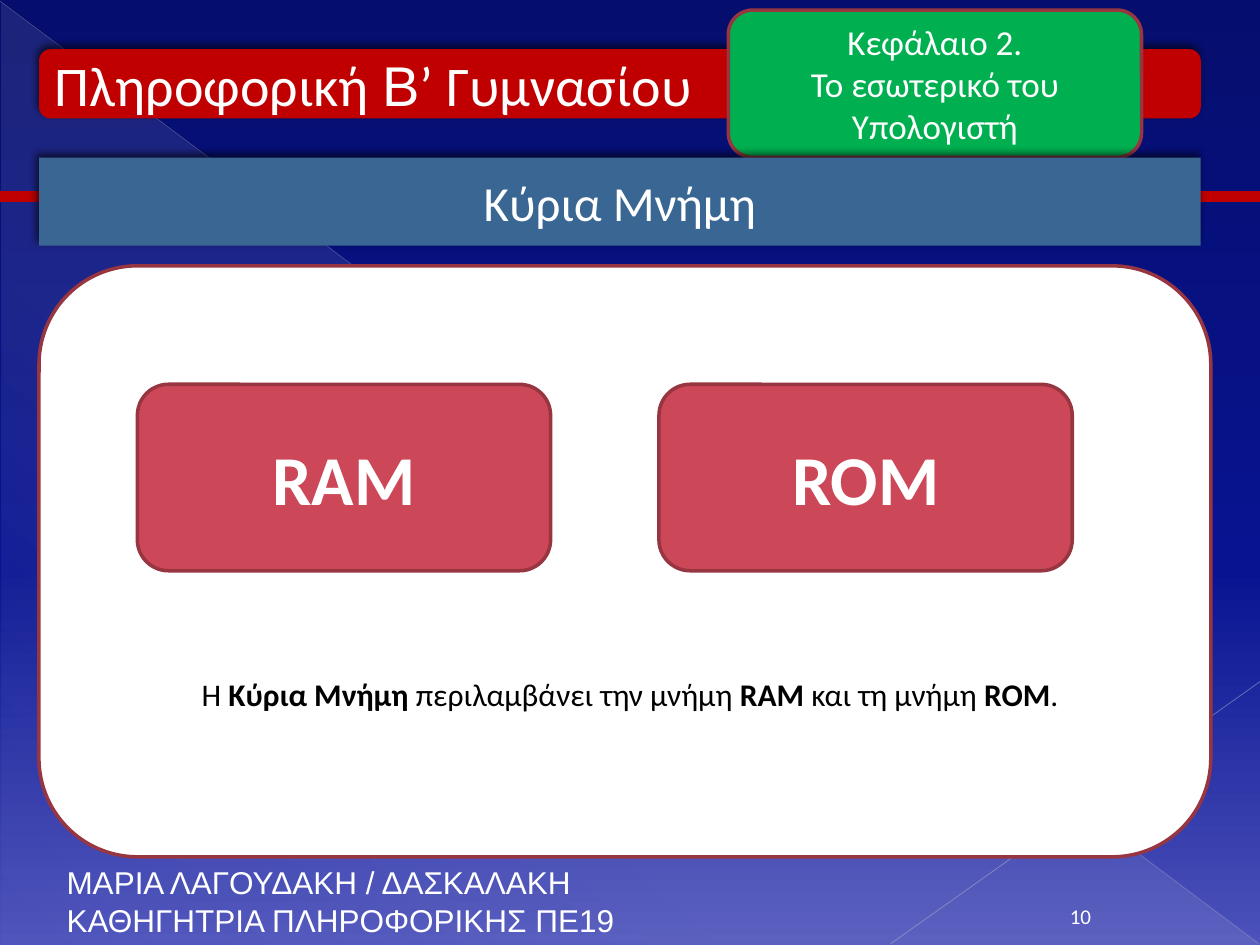
"""Build the main memory (RAM and ROM) slide of a Greek informatics course."""
from dataclasses import dataclass
from typing import NamedTuple, Optional

from lxml import etree
from pptx import Presentation
from pptx import util as u
from pptx.dml.color import RGBColor
from pptx.enum import shapes, text
from pptx.oxml import ns

WHITE = RGBColor(0xFF, 0xFF, 0xFF)
BLACK = RGBColor(0x00, 0x00, 0x00)
RED = RGBColor(0xC0, 0x00, 0x00)
GREEN = RGBColor(0x00, 0xB0, 0x50)
BLUE = RGBColor(0x39, 0x66, 0x93)
ROSE = RGBColor(0xCC, 0x47, 0x57)
MAROON = RGBColor(0x97, 0x35, 0x40)
SILVER = RGBColor(0xB1, 0xB2, 0xC7)
PALE = RGBColor(0xBA, 0xBA, 0xCD)
NIGHT = RGBColor(0x06, 0x0E, 0x6D)
NAVY = RGBColor(0x07, 0x13, 0x91)
VIOLET = RGBColor(0x4C, 0x52, 0xBA)

CENTER = text.PP_ALIGN.CENTER
MIDDLE = text.MSO_ANCHOR.MIDDLE


class Box(NamedTuple):
    left: float
    top: float
    width: float
    height: float

    def emu(self) -> list:
        return [u.Inches(v) for v in self]


class Stop(NamedTuple):
    position: int
    color: RGBColor
    opacity: int = 100


class Span(NamedTuple):
    text: str
    bold: bool = False
    font: str = "Calibri"


@dataclass
class Panel:
    box: Box
    fill: RGBColor
    label: tuple = ()
    size: int = 18
    align: Optional[text.PP_ALIGN] = CENTER
    outlined: bool = True


@dataclass
class Rule:
    start: tuple
    end: tuple
    color: RGBColor
    width: float
    opacity: int = 100


def child(parent, tag: str, **attrs):
    return etree.SubElement(parent, ns.qn(tag), {k: str(v) for k, v in attrs.items()})


def set_gradient(parent, stops: list, angle: int) -> None:
    solid = parent.find(ns.qn("a:solidFill"))
    grad = etree.Element(ns.qn("a:gradFill"), rotWithShape="1")
    items = child(grad, "a:gsLst")
    for stop in stops:
        gs = child(items, "a:gs", pos=stop.position * 1000)
        color = child(gs, "a:srgbClr", val=stop.color)
        child(color, "a:alpha", val=stop.opacity * 1000)
    child(grad, "a:lin", ang=angle * 60000, scaled=0)
    parent.replace(solid, grad)


def add_shadow(sp) -> None:
    effects = sp._element.spPr.find(ns.qn("a:effectLst"))
    shadow = child(effects, "a:outerShdw", blurRad=u.Pt(4), dist=u.Pt(3),
                   dir=245 * 60000, rotWithShape=0)
    child(child(shadow, "a:srgbClr", val=BLACK), "a:alpha", val=60000)


def write(tf, paragraphs: tuple, *, size: int, color: RGBColor = WHITE,
          align=None, anchor=text.MSO_ANCHOR.TOP, auto_size=text.MSO_AUTO_SIZE.NONE) -> None:
    tf.word_wrap = True
    tf.auto_size = auto_size
    tf.vertical_anchor = anchor
    for i, spans in enumerate(paragraphs):
        p = tf.add_paragraph() if i else tf.paragraphs[0]
        p.alignment = align or text.PP_ALIGN.LEFT
        for span in spans:
            r = p.add_run()
            r.text = span.text
            r.font.size = u.Pt(size)
            r.font.name = span.font
            r.font.bold = span.bold
            r.font.color.rgb = color


def style_panel(sp, panel: Panel) -> None:
    sp.shadow.inherit = False
    sp.fill.solid()
    sp.fill.fore_color.rgb = panel.fill
    if panel.outlined:
        sp.line.color.rgb = MAROON
        sp.line.width = u.Pt(2)
    else:
        sp.line.fill.background()
        add_shadow(sp)
    write(sp.text_frame, panel.label, size=panel.size, align=panel.align, anchor=MIDDLE)


def add_panel(s, panel: Panel) -> None:
    sp = s.shapes.add_shape(shapes.MSO_SHAPE.ROUNDED_RECTANGLE, *panel.box.emu())
    style_panel(sp, panel)


def place_title(s, panel: Panel) -> None:
    sp = s.shapes.title
    sp.left, sp.top, sp.width, sp.height = panel.box.emu()
    child(child(sp._element.spPr, "a:prstGeom", prst="roundRect"), "a:avLst")
    style_panel(sp, panel)
    s.shapes._spTree.append(sp._element)


def add_rule(s, rule: Rule) -> None:
    ends = [u.Inches(v) for v in (*rule.start, *rule.end)]
    line = s.shapes.add_connector(shapes.MSO_CONNECTOR.STRAIGHT, *ends)
    line.line.color.rgb = rule.color
    line.line.width = u.Pt(rule.width)
    color = line._element.spPr.find(".//" + ns.qn("a:srgbClr"))
    child(color, "a:alpha", val=rule.opacity * 1000)
    child(line._element.spPr, "a:effectLst")


def add_text(s, box: Box, paragraphs: tuple, **style) -> None:
    write(s.shapes.add_textbox(*box.emu()).text_frame, paragraphs, **style)


def add_backdrop(s) -> None:
    s.background.fill.solid()
    set_gradient(s._element.cSld.find(".//" + ns.qn("p:bgPr")),
                 [Stop(0, NIGHT), Stop(60, NAVY), Stop(100, VIOLET)], 90)
    sp = s.shapes.add_shape(shapes.MSO_SHAPE.RIGHT_TRIANGLE, *Box(0.01, 0.02, 9.99, 7.48).emu())
    sp.shadow.inherit = False
    sp.fill.solid()
    sp.line.fill.background()
    set_gradient(sp._element.spPr,
                 [Stop(0, WHITE, 10), Stop(70, WHITE, 8), Stop(100, WHITE, 1)], 133)
    add_rule(s, Rule((0, 0.01), (9.99, 7.49), SILVER, 0.39, 35))
    add_rule(s, Rule((10, 5.41), (7.07, 7.49), PALE, 0.47, 45))


def main() -> None:
    prs = Presentation()
    prs.slide_width, prs.slide_height = u.Inches(10), u.Inches(7.5)
    s = prs.slides.add_slide(prs.slide_layouts[5])
    add_backdrop(s)

    course = (Span("Πληροφορική "), Span("Β", font="Arial"), Span("’ Γυμνασίου"))
    add_panel(s, Panel(Box(0.31, 0.39, 9.22, 0.55), RED, (course,), 32, None, False))
    add_rule(s, Rule((0, 1.56), (10, 1.56), RED, 6))
    chapter = ((Span("Κεφάλαιο 2."),), (Span("Το εσωτερικό του Υπολογιστή"),))
    add_panel(s, Panel(Box(5.78, 0.08, 3.28, 1.17), GREEN, chapter, 20))
    add_text(s, Box(8.3, 7.09, 0.55, 0.33), ((Span("10"),),), size=12,
             align=CENTER, anchor=text.MSO_ANCHOR.BOTTOM)
    place_title(s, Panel(Box(0.31, 1.25, 9.22, 0.7), BLUE, ((Span("Κύρια Μνήμη"),),), 28,
                         outlined=False))

    add_panel(s, Panel(Box(0.31, 2.11, 9.3, 4.69), WHITE))
    summary = (Span("Η "), Span("Κύρια Μνήμη ", True), Span("περιλαμβάνει την μνήμη "),
               Span("RAM ", True), Span("και τη μνήμη "), Span("ROM", True), Span("."))
    add_text(s, Box(0.78, 5.31, 8.44, 0.4), (summary,), size=18, color=BLACK, align=CENTER,
             auto_size=text.MSO_AUTO_SIZE.SHAPE_TO_FIT_TEXT)
    for i, memory in enumerate(("RAM", "ROM")):
        box = Box(1.09 + 4.14 * i, 3.05, 3.28, 1.48)
        add_panel(s, Panel(box, ROSE, ((Span(memory, True),),), 40))

    author = ("ΜΑΡΙΑ ΛΑΓΟΥΔΑΚΗ / ΔΑΣΚΑΛΑΚΗ", "ΚΑΘΗΓΗΤΡΙΑ ΠΛΗΡΟΦΟΡΙΚΗΣ ΠΕ19")
    add_text(s, Box(0.43, 6.8, 5.78, 0.7),
             tuple((Span(line, font="Arial"),) for line in author), size=18,
             auto_size=text.MSO_AUTO_SIZE.SHAPE_TO_FIT_TEXT)
    prs.save("out.pptx")


if __name__ == "__main__":
    main()
